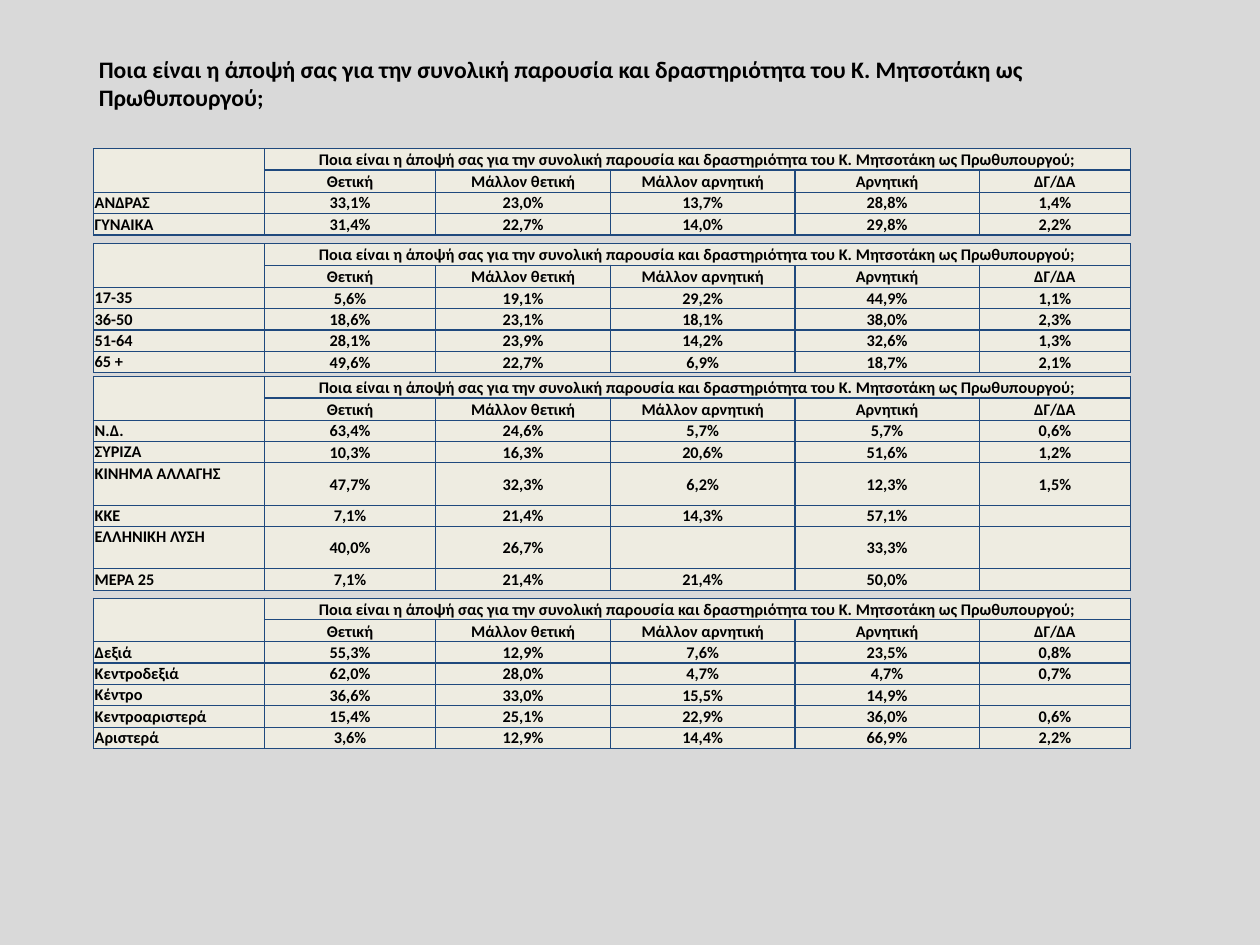
from lxml import etree
from pptx import Presentation
from pptx.dml.color import RGBColor
from pptx.enum.text import MSO_ANCHOR as ANCHOR, PP_ALIGN as ALIGN
from pptx.oxml.ns import qn
from pptx.util import Cm, Pt

GREY = RGBColor(0xD9, 0xD9, 0xD9)
CREAM = RGBColor(0xEE, 0xEC, 0xE1)
NAVY = RGBColor(0x1F, 0x49, 0x7D)
BLACK = RGBColor(0, 0, 0)

QUESTION = ("Ποια είναι η άποψή σας για την συνολική παρουσία και "
            "δραστηριότητα του Κ. Μητσοτάκη ως Πρωθυπουργού;")
ANSWERS = ["Θετική", "Μάλλον θετική", "Μάλλον αρνητική", "Αρνητική", "ΔΓ/ΔΑ"]

GENDER = [
    ["ΑΝΔΡΑΣ", "33,1%", "23,0%", "13,7%", "28,8%", "1,4%"],
    ["ΓΥΝΑΙΚΑ", "31,4%", "22,7%", "14,0%", "29,8%", "2,2%"],
]
AGE = [
    ["17-35", "5,6%", "19,1%", "29,2%", "44,9%", "1,1%"],
    ["36-50", "18,6%", "23,1%", "18,1%", "38,0%", "2,3%"],
    ["51-64", "28,1%", "23,9%", "14,2%", "32,6%", "1,3%"],
    ["65 +", "49,6%", "22,7%", "6,9%", "18,7%", "2,1%"],
]
PARTY = [
    ["Ν.Δ.", "63,4%", "24,6%", "5,7%", "5,7%", "0,6%"],
    ["ΣΥΡΙΖΑ", "10,3%", "16,3%", "20,6%", "51,6%", "1,2%"],
    ["ΚΙΝΗΜΑ ΑΛΛΑΓΗΣ", "47,7%", "32,3%", "6,2%", "12,3%", "1,5%"],
    ["ΚΚΕ", "7,1%", "21,4%", "14,3%", "57,1%", ""],
    ["ΕΛΛΗΝΙΚΗ ΛΥΣΗ", "40,0%", "26,7%", "", "33,3%", ""],
    ["ΜΕΡΑ 25", "7,1%", "21,4%", "21,4%", "50,0%", ""],
]
POSITION = [
    ["Δεξιά", "55,3%", "12,9%", "7,6%", "23,5%", "0,8%"],
    ["Κεντροδεξιά", "62,0%", "28,0%", "4,7%", "4,7%", "0,7%"],
    ["Κέντρο", "36,6%", "33,0%", "15,5%", "14,9%", ""],
    ["Κεντροαριστερά", "15,4%", "25,1%", "22,9%", "36,0%", "0,6%"],
    ["Αριστερά", "3,6%", "12,9%", "14,4%", "66,9%", "2,2%"],
]

COLUMNS = [4.07, 4.09, 4.17, 4.4, 4.4, 3.61]
ROW, ANSWER_ROW, TALL_ROW = 0.51, 0.53, 1.01
TALL_LABELS = {"ΚΙΝΗΜΑ ΑΛΛΑΓΗΣ", "ΕΛΛΗΝΙΚΗ ΛΥΣΗ"}


def set_font(p, size):
    p.font.name = "Calibri"
    p.font.size = Pt(size)
    p.font.bold = True
    p.font.color.rgb = BLACK


def set_borders(cell):
    tc_pr = cell._tc.get_or_add_tcPr()
    for i, side in enumerate(("a:lnL", "a:lnR", "a:lnT", "a:lnB")):
        ln = etree.Element(qn(side), w=str(Pt(1)))
        fill = etree.SubElement(ln, qn("a:solidFill"))
        etree.SubElement(fill, qn("a:srgbClr"), val=str(NAVY))
        tc_pr.insert(i, ln)


def style_cell(cell, text, row, col):
    cell.fill.solid()
    cell.fill.fore_color.rgb = CREAM
    set_borders(cell)
    cell.margin_left = cell.margin_right = cell.margin_top = Cm(0.02)
    cell.margin_bottom = 0
    if row < 2:
        cell.vertical_anchor = ANCHOR.BOTTOM
    else:
        cell.vertical_anchor = ANCHOR.MIDDLE if col else ANCHOR.TOP
    p = cell.text_frame.paragraphs[0]
    p.alignment = ALIGN.CENTER if col else ALIGN.LEFT
    set_font(p, 11)
    if text:
        p.add_run().text = text
    else:
        # Keep empty cells from stretching their row
        p._p.get_or_add_endParaRPr().set("sz", "1100")


def add_title(slide, left, top, width, height):
    tf = slide.shapes.add_textbox(Cm(left), Cm(top), Cm(width), Cm(height)).text_frame
    tf.word_wrap = True
    tf.vertical_anchor = ANCHOR.MIDDLE
    tf.margin_left = tf.margin_right = Cm(0.3)
    tf.margin_top = tf.margin_bottom = Cm(0.15)
    p = tf.paragraphs[0]
    p.add_run().text = QUESTION
    set_font(p, 16)


def add_breakdown(slide, left, top, groups):
    rows = [["", QUESTION, "", "", "", ""], ["", *ANSWERS], *groups]
    heights = [ROW, ANSWER_ROW]
    heights += [TALL_ROW if g[0] in TALL_LABELS else ROW for g in groups]
    table = slide.shapes.add_table(
        len(rows), len(COLUMNS), Cm(left), Cm(top),
        Cm(sum(COLUMNS)), Cm(sum(heights))).table
    table.first_row = table.horz_banding = False
    for column, width in zip(table.columns, COLUMNS):
        column.width = Cm(width)
    for i, (texts, height) in enumerate(zip(rows, heights)):
        table.rows[i].height = Cm(height)
        for j, text in enumerate(texts):
            style_cell(table.cell(i, j), text, i, j)
    # Empty corner and question across the answers
    table.cell(0, 0).merge(table.cell(1, 0))
    table.cell(0, 1).merge(table.cell(0, len(COLUMNS) - 1))


def main():
    prs = Presentation()
    prs.slide_width, prs.slide_height = Cm(30.07), Cm(22.56)
    slide = prs.slides.add_slide(prs.slide_layouts[6])
    slide.background.fill.solid()
    slide.background.fill.fore_color.rgb = GREY

    add_title(slide, 2.06, 1.2, 25.93, 1.57)
    for top, groups in ((3.55, GENDER), (5.82, AGE), (8.99, PARTY), (14.28, POSITION)):
        add_breakdown(slide, 2.24, top, groups)
    prs.save("out.pptx")


if __name__ == "__main__":
    main()
